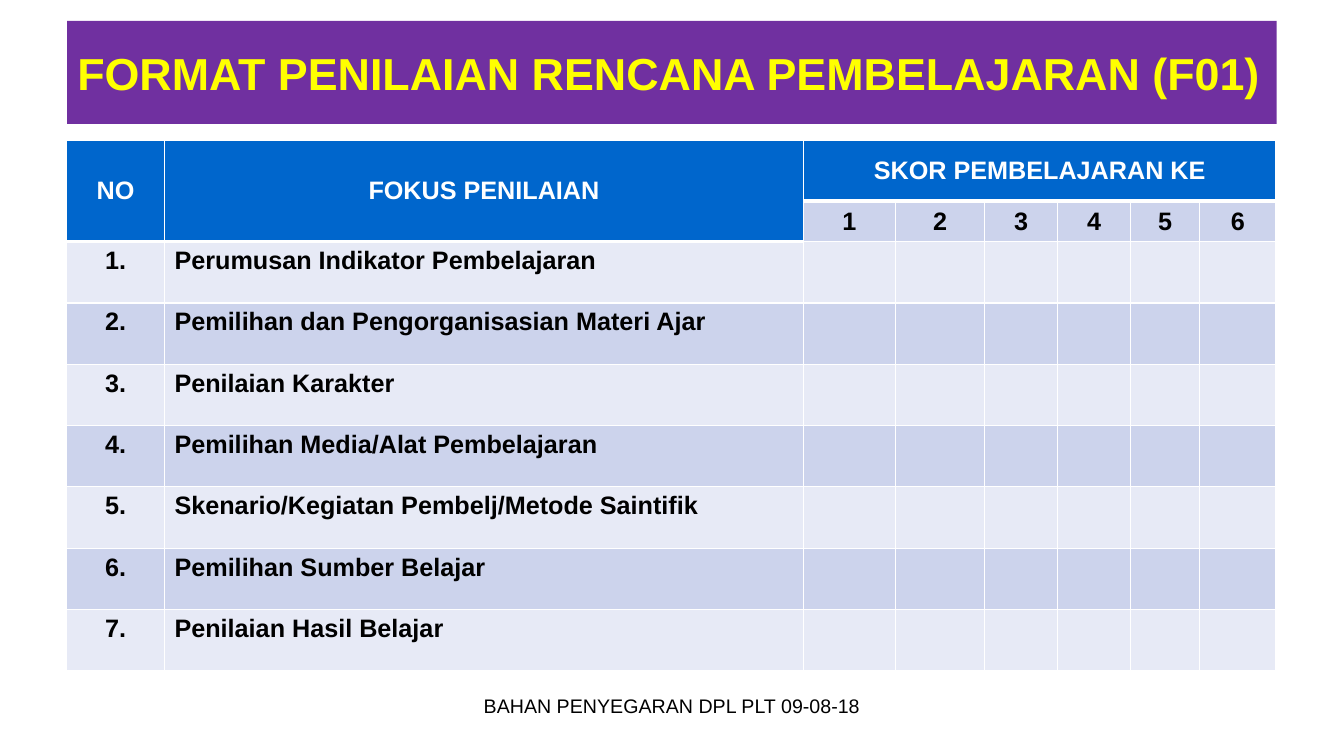
from dataclasses import dataclass

from lxml.etree import SubElement
from pptx import Presentation
from pptx.dml.color import RGBColor
from pptx.enum.text import MSO_ANCHOR as Anchor, MSO_AUTO_SIZE as AutoSize, PP_ALIGN as Align
from pptx.oxml.ns import qn
from pptx.util import Pt


@dataclass(frozen=True)
class Theme:
    font: str = "Arial"
    title_size: float = 32
    table_size: float = 18
    footer_size: float = 14
    title_fill: str = "7030A0"
    title_text: str = "FFFF00"
    title_outline: str = "3399FF"
    header_fill: str = "0066CC"
    white: str = "FFFFFF"
    black: str = "000000"
    light_band: str = "E7EAF6"
    dark_band: str = "CCD3EC"


class SlideBuilder:
    def __init__(self, slide, theme):
        self.slide = slide
        self.theme = theme

    def set_text(self, text_frame, text, size, color, bold=False, align=Align.LEFT):
        text_frame.text = text
        paragraph = text_frame.paragraphs[0]
        paragraph.alignment = align
        for run in paragraph.runs:
            run.font.name = self.theme.font
            run.font.size = Pt(size)
            run.font.bold = bold
            run.font.color.rgb = RGBColor.from_string(color)

    def add_line(self, parent, tag, width, color):
        line = SubElement(parent, qn(tag), w=str(Pt(width)))
        fill = SubElement(line, qn("a:solidFill"))
        SubElement(fill, qn("a:srgbClr"), val=color)
        return line

    def title(self, text, left, top, width, height):
        theme = self.theme
        shape = self.slide.shapes.title
        shape.left, shape.top, shape.width, shape.height = map(Pt, (left, top, width, height))
        shape.fill.solid()
        shape.fill.fore_color.rgb = RGBColor.from_string(theme.title_fill)
        frame = shape.text_frame
        frame.word_wrap = True
        frame.auto_size = AutoSize.NONE
        frame.vertical_anchor = Anchor.MIDDLE
        self.set_text(frame, text, theme.title_size, theme.title_text, bold=True)
        # The letter outline has to come first among the run properties
        properties = frame.paragraphs[0].runs[0].font._element
        properties.insert(0, self.add_line(properties, "a:ln", 1.75, theme.title_outline))

    def text(self, text, left, top, width, height):
        box = self.slide.shapes.add_textbox(*map(Pt, (left, top, width, height)))
        box.text_frame.word_wrap = True
        self.set_text(box.text_frame, text, self.theme.footer_size, self.theme.black,
                      align=Align.CENTER)

    def table(self, left, top, widths, heights):
        frame = self.slide.shapes.add_table(
            len(heights), len(widths), *map(Pt, (left, top, sum(widths), sum(heights))))
        table = frame.table
        table.first_row = table.horz_banding = False
        for column, width in zip(table.columns, widths):
            column.width = Pt(width)
        for row, height in zip(table.rows, heights):
            row.height = Pt(height)
        return table

    def cell(self, cell, text, fill, color, align, anchor, top_line=1, bottom_line=1):
        properties = cell._tc.get_or_add_tcPr()
        for side, width in zip("LRTB", (1, 1, top_line, bottom_line)):
            self.add_line(properties, f"a:ln{side}", width, self.theme.white)
        cell.fill.solid()
        cell.fill.fore_color.rgb = RGBColor.from_string(fill)
        cell.vertical_anchor = anchor
        if text:
            self.set_text(cell.text_frame, text, self.theme.table_size, color, True, align)


FOCUS_ITEMS = [
    "Perumusan Indikator Pembelajaran",
    "Pemilihan dan Pengorganisasian Materi Ajar",
    "Penilaian Karakter",
    "Pemilihan Media/Alat Pembelajaran",
    "Skenario/Kegiatan Pembelj/Metode Saintifik",
    "Pemilihan Sumber Belajar",
    "Penilaian Hasil Belajar",
]
COLUMN_WIDTHS = [70, 456.5, 65.5, 64, 52, 52, 49.5, 54.5]
ROW_HEIGHT, SCORE_ROW_HEIGHT = 43.8, 28.8
SCORE_COUNT = 6


def build_score_table(builder):
    theme = builder.theme
    blank_scores = [""] * SCORE_COUNT
    rows = [
        ["NO", "FOKUS PENILAIAN", "SKOR PEMBELAJARAN KE"] + blank_scores[1:],
        ["", ""] + [str(score) for score in range(1, SCORE_COUNT + 1)],
    ]
    rows += [[f"{number}.", item] + blank_scores for number, item in enumerate(FOCUS_ITEMS, 1)]
    heights = [ROW_HEIGHT, SCORE_ROW_HEIGHT] + [ROW_HEIGHT] * len(FOCUS_ITEMS)
    table = builder.table(47.5, 100, COLUMN_WIDTHS, heights)

    # Header cells: two tall ones and one wide one
    for column in (0, 1):
        table.cell(0, column).merge(table.cell(1, column))
    table.cell(0, 2).merge(table.cell(0, len(COLUMN_WIDTHS) - 1))

    # A thick line runs below the header, which is one row deeper on the left
    for row, texts in enumerate(rows):
        for column, text in enumerate(texts):
            header_depth = 2 if column < 2 else 1
            is_header = row < header_depth
            band = theme.dark_band if row % 2 else theme.light_band
            builder.cell(
                table.cell(row, column), text,
                fill=theme.header_fill if is_header else band,
                color=theme.white if is_header else theme.black,
                align=Align.LEFT if column == 1 and not is_header else Align.CENTER,
                anchor=Anchor.MIDDLE if row < 2 else Anchor.TOP,
                top_line=3 if row == header_depth else 1,
                bottom_line=3 if is_header else 1)


def main():
    presentation = Presentation()
    presentation.slide_width, presentation.slide_height = Pt(960), Pt(540)
    slide = presentation.slides.add_slide(presentation.slide_layouts[5])
    builder = SlideBuilder(slide, Theme())

    # Title band, score table, footer line
    builder.title("FORMAT PENILAIAN RENCANA PEMBELAJARAN (F01)", 48, 15, 864, 73.5)
    build_score_table(builder)
    builder.text("BAHAN PENYEGARAN DPL PLT 09-08-18", 328, 492, 304, 37.5)

    presentation.save("out.pptx")


if __name__ == "__main__":
    main()
